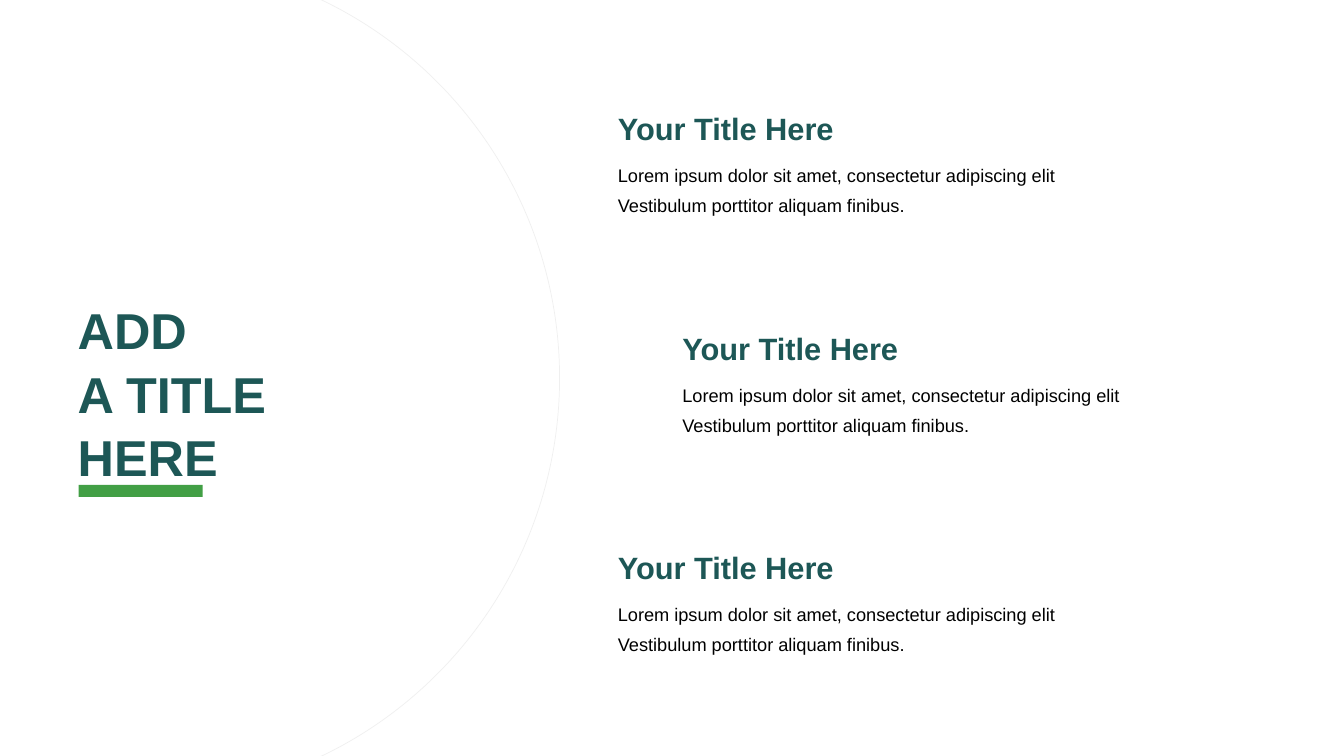
from lxml.etree import SubElement
from pptx import Presentation
from pptx.dml.color import RGBColor
from pptx.enum.shapes import MSO_SHAPE as Shape
from pptx.enum.text import MSO_ANCHOR as Anchor, MSO_AUTO_SIZE as AutoSize, PP_ALIGN as Align
from pptx.oxml.ns import qn
from pptx.util import Inches, Pt

# Content
TITLE = ["ADD", "A TITLE", "HERE"]
HEADING = "Your Title Here"
BODY = ["Lorem ipsum dolor sit amet, consectetur adipiscing elit",
        "Vestibulum porttitor aliquam finibus."]
ITEMS = [(HEADING, BODY), (HEADING, BODY), (HEADING, BODY)]

# Look
FONT = "Arial"
TEAL, GREEN, BLACK, GREY = "1D5756", "429F45", "000000", "D9D9D9"

# Layout, in inches
WIDTH, HEIGHT = 13.33, 7.5
CIRCLE_SIZE, CIRCLE_RIGHT = 8.32, 5.55
ITEM_LEFT, MIDDLE_INDENT = 6.03, 0.64
ITEM_TOP, ITEM_STEP = 1.02, 2.18
HEADING_HEIGHT = 0.48


def color(hex_string):
    return RGBColor.from_string(hex_string)


def box(left, top, width, height):
    return [Inches(length) for length in (left, top, width, height)]


def write(holder, lines, size, hex_string, bold=False, spacing=1.05, wrap=False):
    frame = holder.text_frame
    frame.text = "\n".join(lines)
    frame.word_wrap = wrap
    frame.auto_size = AutoSize.SHAPE_TO_FIT_TEXT
    frame.vertical_anchor = Anchor.TOP
    for paragraph in frame.paragraphs:
        paragraph.alignment = Align.LEFT
        paragraph.line_spacing = spacing
        paragraph.space_before = Pt(0)
        for run in paragraph.runs:
            run.font.name, run.font.size, run.font.bold = FONT, Pt(size), bold
            run.font.color.rgb = color(hex_string)


deck = Presentation()
deck.slide_width, deck.slide_height = Inches(WIDTH), Inches(HEIGHT)
slide = deck.slides.add_slide(deck.slide_layouts[5])
shapes = slide.shapes

# Large faint circle, centred on the slide's height
circle = shapes.add_shape(Shape.OVAL, *box(
    CIRCLE_RIGHT - CIRCLE_SIZE, (HEIGHT - CIRCLE_SIZE) / 2, CIRCLE_SIZE, CIRCLE_SIZE))
circle.shadow.inherit = False
circle.fill.background()
circle.line.color.rgb = color(GREY)
circle.line.width = Pt(0.5)
line_color = circle.line.fill._xPr.find(".//" + qn("a:srgbClr"))
SubElement(line_color, qn("a:alpha"), val="40000")

# Title and the bar below it
title = shapes.title
title.left, title.top, title.width, title.height = box(0.67, 2.89, 2.23, 1.92)
write(title, TITLE, 36, TEAL, bold=True)

bar = shapes.add_shape(Shape.RECTANGLE, *box(0.78, 4.81, 1.23, 0.12))
bar.shadow.inherit = False
bar.fill.solid()
bar.fill.fore_color.rgb = color(GREEN)
bar.line.fill.background()

# Items follow the circle: every second one is indented
for row, (heading, body) in enumerate(ITEMS):
    left = ITEM_LEFT + MIDDLE_INDENT * (row % 2)
    top = ITEM_TOP + ITEM_STEP * row
    heading_box = shapes.add_textbox(*box(left, top, 2.91, HEADING_HEIGHT))
    write(heading_box, [heading], 22, TEAL, bold=True, wrap=True)
    body_box = shapes.add_textbox(*box(left, top + HEADING_HEIGHT, 4.7, 0.66))
    write(body_box, body, 13, BLACK, spacing=1.37)

deck.save("out.pptx")
